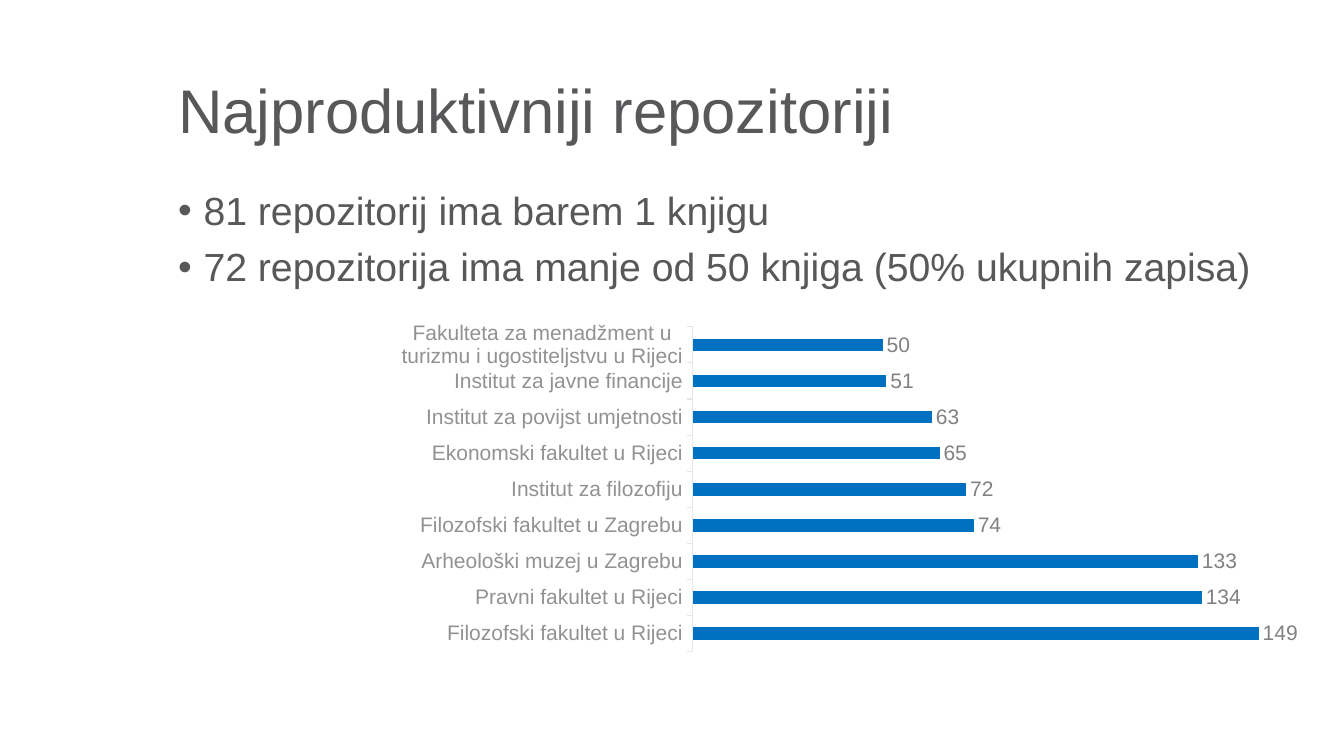
from dataclasses import dataclass

from lxml import etree
from pptx import Presentation
from pptx.chart.data import CategoryChartData
from pptx.dml.color import RGBColor
from pptx.enum.chart import XL_CHART_TYPE, XL_LABEL_POSITION, XL_TICK_LABEL_POSITION, XL_TICK_MARK
from pptx.enum.text import MSO_ANCHOR
from pptx.oxml.ns import qn
from pptx.util import Cm, Pt

BAR_CLUSTERED = XL_CHART_TYPE.BAR_CLUSTERED
OUTSIDE_END = XL_LABEL_POSITION.OUTSIDE_END
LABELS_LOW = XL_TICK_LABEL_POSITION.LOW
TICK_OUTSIDE = XL_TICK_MARK.OUTSIDE
TICK_NONE = XL_TICK_MARK.NONE
ANCHOR_TOP = MSO_ANCHOR.TOP
ANCHOR_MIDDLE = MSO_ANCHOR.MIDDLE


@dataclass(frozen=True)
class Theme:
    font: str = "Arial"
    text: RGBColor = RGBColor(0x58, 0x58, 0x5A)
    category: RGBColor = RGBColor(0x92, 0x92, 0x94)
    value: RGBColor = RGBColor(0x81, 0x81, 0x84)
    axis: RGBColor = RGBColor(0xE6, 0xE6, 0xE6)
    bar: RGBColor = RGBColor(0x00, 0x70, 0xC0)
    title_size: Pt = Pt(44)
    body_size: Pt = Pt(28)
    chart_size: Pt = Pt(10)
    label_size: Pt = Pt(15)


THEME = Theme()

TITLE = "Najproduktivniji repozitoriji"
FINDINGS = [
    "81 repozitorij ima barem 1 knjigu",
    "72 repozitorija ima manje od 50 knjiga (50% ukupnih zapisa)",
]
BOOKS_BY_REPOSITORY = {
    "Filozofski fakultet u Rijeci": 149,
    "Pravni fakultet u Rijeci": 134,
    "Arheološki muzej u Zagrebu": 133,
    "Filozofski fakultet u Zagrebu": 74,
    "Institut za filozofiju": 72,
    "Ekonomski fakultet u Rijeci": 65,
    "Institut za povijst umjetnosti": 63,
    "Institut za javne financije": 51,
    "Fakulteta za menadžment u turizmu i ugostiteljstvu u Rijeci": 50,
}


def style_font(font, size, color):
    font.name = THEME.font
    font.size = size
    font.color.rgb = color


def add_text_frame(slide, left, top, width, height, anchor):
    text_frame = slide.shapes.add_textbox(left, top, width, height).text_frame
    text_frame.word_wrap = True
    text_frame.vertical_anchor = anchor
    return text_frame


def write_line(paragraph, text, size):
    paragraph.line_spacing = 0.9
    run = paragraph.add_run()
    run.text = text
    style_font(run.font, size, THEME.text)


def set_bullet(paragraph):
    properties = paragraph._p.get_or_add_pPr()
    indent = Cm(0.64)
    properties.set("marL", str(indent))
    properties.set("indent", str(-indent))
    etree.SubElement(properties, qn("a:buFont")).set("typeface", THEME.font)
    etree.SubElement(properties, qn("a:buChar")).set("char", "•")


def add_title(slide, text):
    text_frame = add_text_frame(slide, Cm(4.24), Cm(1.02), Cm(27.3), Cm(3.68), ANCHOR_MIDDLE)
    write_line(text_frame.paragraphs[0], text, THEME.title_size)


def add_bullets(slide, lines):
    text_frame = add_text_frame(slide, Cm(4.24), Cm(4.7), Cm(27.76), Cm(12.47), ANCHOR_TOP)
    for index, line in enumerate(lines):
        paragraph = text_frame.add_paragraph() if index else text_frame.paragraphs[0]
        set_bullet(paragraph)
        if index:
            paragraph.space_before = Pt(10)
        write_line(paragraph, line, THEME.body_size)


def place_plot_area(chart, x, y, w, h):
    """Fix the inner plot area, in fractions of the chart's size."""
    plot_area = chart._chartSpace.chart.plotArea
    for old_layout in plot_area.findall(qn("c:layout")):
        plot_area.remove(old_layout)
    layout = etree.Element(qn("c:layout"))
    plot_area.insert(0, layout)
    manual = etree.SubElement(layout, qn("c:manualLayout"))
    settings = {"layoutTarget": "inner", "xMode": "edge", "yMode": "edge",
                "x": x, "y": y, "w": w, "h": h}
    for name, setting in settings.items():
        etree.SubElement(manual, qn(f"c:{name}")).set("val", str(setting))


def style_axes(chart):
    category_axis = chart.category_axis
    category_axis.major_tick_mark = TICK_OUTSIDE
    category_axis.minor_tick_mark = TICK_NONE
    category_axis.tick_label_position = LABELS_LOW
    category_axis.has_major_gridlines = False
    category_axis.format.line.color.rgb = THEME.axis
    category_axis.format.line.width = Pt(0.75)
    style_font(category_axis.tick_labels.font, THEME.label_size, THEME.category)

    value_axis = chart.value_axis
    value_axis.minimum_scale = 0
    value_axis.maximum_scale = 160
    value_axis.has_major_gridlines = False
    value_axis.visible = False


def style_bars(plot):
    plot.gap_width = 182
    plot.vary_by_categories = False
    series = plot.series[0]
    series.format.fill.solid()
    series.format.fill.fore_color.rgb = THEME.bar
    labels = series.data_labels
    labels.show_value = True
    labels.position = OUTSIDE_END
    style_font(labels.font, THEME.label_size, THEME.value)


def add_bar_chart(slide, values_by_category):
    data = CategoryChartData()
    data.categories = list(values_by_category)
    data.add_series("Series 1", list(values_by_category.values()))
    chart = slide.shapes.add_chart(
        BAR_CLUSTERED, Cm(9.68), Cm(7.98), Cm(23.57), Cm(8.61), data
    ).chart
    chart.has_legend = False
    chart.has_title = False
    style_font(chart.font, THEME.chart_size, THEME.text)
    style_axes(chart)
    style_bars(chart.plots[0])
    place_plot_area(chart, x=0.33, y=0.03, w=0.65, h=0.95)


def main():
    presentation = Presentation()
    presentation.slide_width = Cm(33.87)
    presentation.slide_height = Cm(19.05)
    slide = presentation.slides.add_slide(presentation.slide_layouts[6])
    add_title(slide, TITLE)
    add_bullets(slide, FINDINGS)
    add_bar_chart(slide, BOOKS_BY_REPOSITORY)
    presentation.save("out.pptx")


if __name__ == "__main__":
    main()
